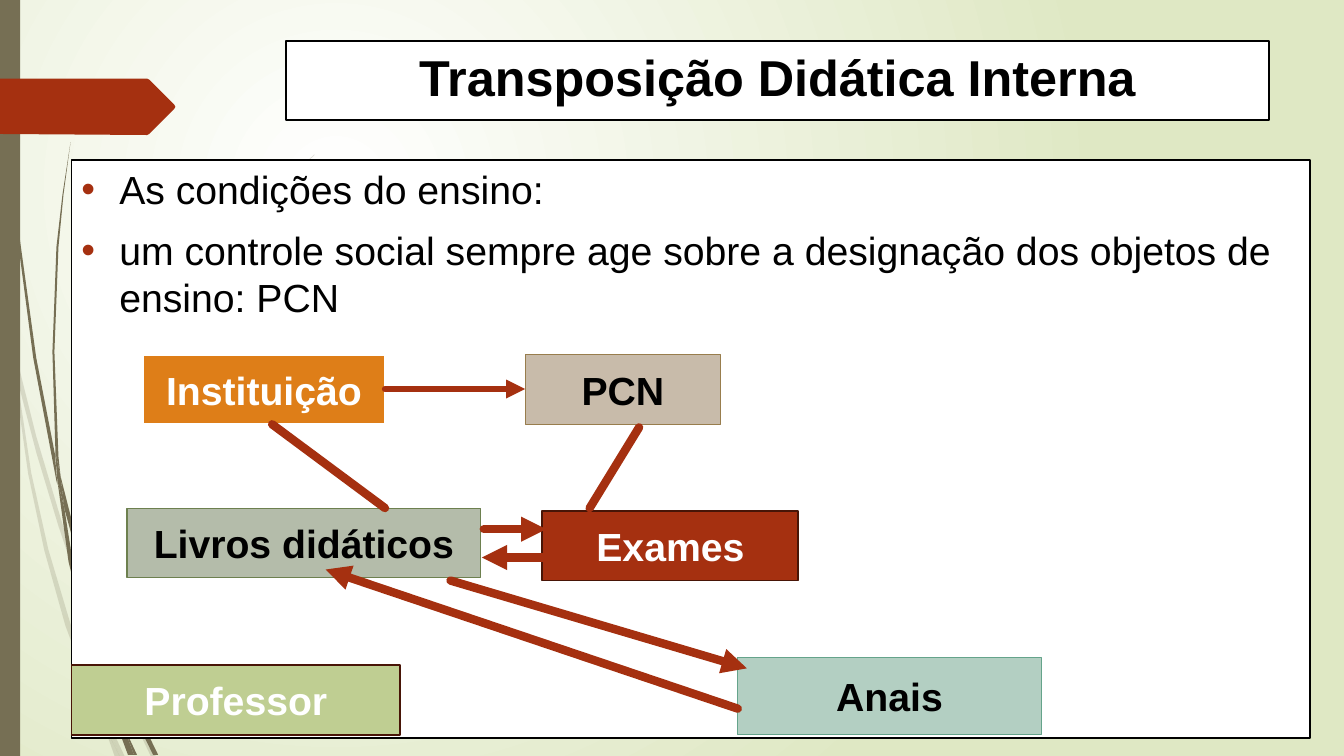
import pptx
import pptx.dml.color
import pptx.enum.shapes
import pptx.enum.text
import pptx.oxml.ns
import pptx.oxml.xmlchemy
import pptx.util
from lxml import etree

Pt = pptx.util.Pt
qn = pptx.oxml.ns.qn
PP_ALIGN = pptx.enum.text.PP_ALIGN
ANCHOR = pptx.enum.text.MSO_ANCHOR
RECT = pptx.enum.shapes.MSO_SHAPE.RECTANGLE
STRAIGHT = pptx.enum.shapes.MSO_CONNECTOR.STRAIGHT
GRID = Pt(0.72)  # unit of the freeform coordinates
OLIVE, RUST, BLACK, WHITE = "766F54", "A53010", "000000", "FFFFFF"


def rgb(color):
    return pptx.dml.color.RGBColor.from_string(color)


def paint(sp, fill, line=None, width=0):
    """Give a shape a flat fill and an optional outline, without shadow."""
    sp.shadow.inherit = False
    sp.fill.solid()
    sp.fill.fore_color.rgb = rgb(fill)
    if line:
        sp.line.color.rgb = rgb(line)
        sp.line.width = Pt(width)
    else:
        sp.line.fill.background()


prs = pptx.Presentation()
prs.slide_width, prs.slide_height = Pt(960), Pt(540)
s = prs.slides.add_slide(prs.slide_layouts[6])

# Background: circular gradient centred in the upper left
fill = s.background.fill
fill.gradient()
for stop, color in zip(fill.gradient_stops, (WHITE, "DFE8C4")):
    stop.color.rgb = rgb(color)
grad = s.element.find(".//" + qn("a:gradFill"))
grad.remove(grad.find(qn("a:lin")))
circle = etree.SubElement(grad, qn("a:path"), {"path": "circle"})
etree.SubElement(circle, qn("a:fillToRect"), l="50000", t="50000", r="100000", b="100000")

# Grass blades on the left edge: a pale group and a solid group
pale_blades = [
    [(11, 350), (9, 322), (0, 282), (0, 299), (10, 344)],
    [(58, 522), (84, 599), (85, 586), (62, 520), (36, 433), (14, 345), (17, 376), (36, 449)],
    [(92, 607), (88, 596), (88, 610), (123, 694), (150, 751), (155, 751), (127, 692)],
    [(119, 751), (124, 751), (105, 711)],
    [(93, 683), (70, 619), (48, 545), (31, 469), (17, 376), (11, 350), (28, 470),
     (44, 546), (65, 621), (92, 693), (101, 714), (99, 707)],
    [(88, 584), (110, 462), (160, 349), (229, 245), (268, 198), (290, 175), (312, 154),
     (312, 153), (289, 175), (268, 197), (228, 244), (158, 348), (107, 461), (85, 584),
     (85, 586), (88, 596)],
    [(101, 714), (114, 751), (119, 751)],
    [(96, 692), (93, 683), (99, 707), (101, 714), (119, 751), (105, 711)],
]
solid_blades = [
    [(7, 110), (17, 233), (33, 355), (56, 477), (57, 481), (55, 457), (55, 453), (36, 355),
     (19, 232), (8, 109), (5, 48), (4, 0), (3, 0), (4, 48)],
    [(88, 592), (106, 645), (106, 633), (106, 631), (93, 590), (75, 531), (60, 472), (64, 505)],
    [(113, 649), (110, 641), (111, 656), (132, 708), (152, 749), (157, 749), (136, 706)],
    [(110, 691), (98, 657), (72, 556), (64, 505), (57, 477), (68, 557), (93, 659),
     (111, 708), (117, 722), (116, 717)],
    [(60, 472), (58, 453), (54, 349), (58, 245), (63, 193), (70, 141), (62, 193),
     (56, 245), (52, 349), (55, 449)],
    [(133, 749), (136, 749), (122, 719)],
    [(57, 477), (64, 505), (60, 472), (55, 449), (55, 453)],
    [(117, 722), (127, 749), (131, 749)],
    [(116, 706), (110, 691), (116, 717), (117, 722), (130, 749), (133, 749), (122, 719)],
]
for blades, alpha in ((pale_blades, "20000"), (solid_blades, None)):
    group = s.shapes.add_group_shape()
    for start, *rest in blades:
        builder = group.shapes.build_freeform(*start, scale=GRID)
        builder.add_line_segments(rest)
        sp = builder.convert_to_shape()
        paint(sp, OLIVE)
        if alpha:
            clr = sp.element.spPr.find(qn("a:solidFill"))[0]
            etree.SubElement(clr, qn("a:alpha"), val=alpha)

stripe = s.shapes.add_shape(RECT, 0, 0, Pt(14.4), Pt(540))
paint(stripe, OLIVE)

builder = s.shapes.build_freeform(0, 78, scale=GRID)
builder.add_line_segments([(146, 78), (148, 79), (173, 104), (174, 106), (173, 108),
                           (148, 133), (146, 134), (0, 133)])
paint(builder.convert_to_shape(), RUST)

# Text boxes: paragraphs, left, top, width, height, fill, line, line width, text format
title = dict(size=36, bold=True, color=BLACK, anchor=ANCHOR.TOP, align=PP_ALIGN.CENTER)
body = dict(size=28, bold=False, color=BLACK, anchor=ANCHOR.TOP, align=PP_ALIGN.LEFT)
dark = dict(size=28, bold=True, color=BLACK, anchor=ANCHOR.MIDDLE, align=PP_ALIGN.CENTER)
light = dict(dark, color=WHITE)
conditions = ["As condições do ensino:",
              "um controle social sempre age sobre a designação dos objetos de ensino: PCN"]
boxes = [
    (["Transposição Didática Interna"], 204.5, 29.5, 702, 56.2, WHITE, BLACK, 1.25, title),
    (conditions, 51.1, 114.5, 884.9, 412.6, WHITE, BLACK, 1.25, body),
    (["Instituição"], 102.2, 253.4, 172.8, 49.7, "DE7E18", WHITE, 1.75, light),
    (["PCN"], 375.1, 253.4, 139.7, 49.7, "C8BBAA", "987D4D", 0.75, dark),
    (["Livros didáticos"], 90.7, 362.9, 252.7, 49.7, "B4BCAA", "6D804F", 0.75, dark),
    (["Exames"], 387.4, 365, 182.9, 49.7, RUST, "481507", 1.25, light),
    (["Professor"], 51.1, 475.2, 234.7, 49.7, "BFCE92", "481507", 1.25, light),
    (["Anais"], 527, 469.4, 216.7, 55.4, "B3CFC2", "65A48B", 0.75, dark),
]
for texts, left, top, width, height, fill, line, line_width, fmt in boxes:
    sp = s.shapes.add_shape(RECT, Pt(left), Pt(top), Pt(width), Pt(height))
    paint(sp, fill, line, line_width)
    tf = sp.text_frame
    tf.word_wrap = True
    tf.vertical_anchor = fmt["anchor"]
    for i, text in enumerate(texts):
        p = tf.add_paragraph() if i else tf.paragraphs[0]
        p.alignment = fmt["align"]
        r = p.add_run()
        r.text = text
        font = {"name": "Arial", "size": Pt(fmt["size"]), "bold": fmt["bold"]}
        for name, value in font.items():
            setattr(r.font, name, value)
        r.font.color.rgb = rgb(fmt["color"])
        if fmt is body:
            p.space_before = Pt(10)
            pPr = p._p.get_or_add_pPr()
            pPr.set("marL", str(Pt(27)))
            pPr.set("indent", str(-Pt(27)))
            bullet_color = etree.SubElement(pPr, qn("a:buClr"))
            etree.SubElement(bullet_color, qn("a:srgbClr"), val=RUST)
            etree.SubElement(pPr, qn("a:buFont"), typeface="Arial")
            etree.SubElement(pPr, qn("a:buChar"), char="•")

# Links: from x, from y, to x, to y, width, arrowhead
links = [
    (275, 277.9, 375.1, 277.9, 4.5, True),
    (194.4, 303.1, 275, 362.9, 6, False),
    (456.5, 305.3, 421.2, 362.9, 6, False),
    (345.6, 378, 390.2, 378, 6, True),
    (388.8, 398.2, 344.2, 398.2, 6, True),
    (321.8, 414.7, 533.5, 477.4, 6, True),
    (527, 506.2, 232.6, 406.8, 6, True),
]
for x1, y1, x2, y2, width, arrow in links:
    link = s.shapes.add_connector(STRAIGHT, Pt(x1), Pt(y1), Pt(x2), Pt(y2))
    link.line.color.rgb = rgb(RUST)
    link.line.width = Pt(width)
    spPr = link._element.spPr
    ln = spPr.find(qn("a:ln"))
    ln.set("cap", "rnd")
    if arrow:
        etree.SubElement(ln, qn("a:tailEnd"), type="triangle")
    etree.SubElement(spPr, qn("a:effectLst"))

prs.save("out.pptx")
